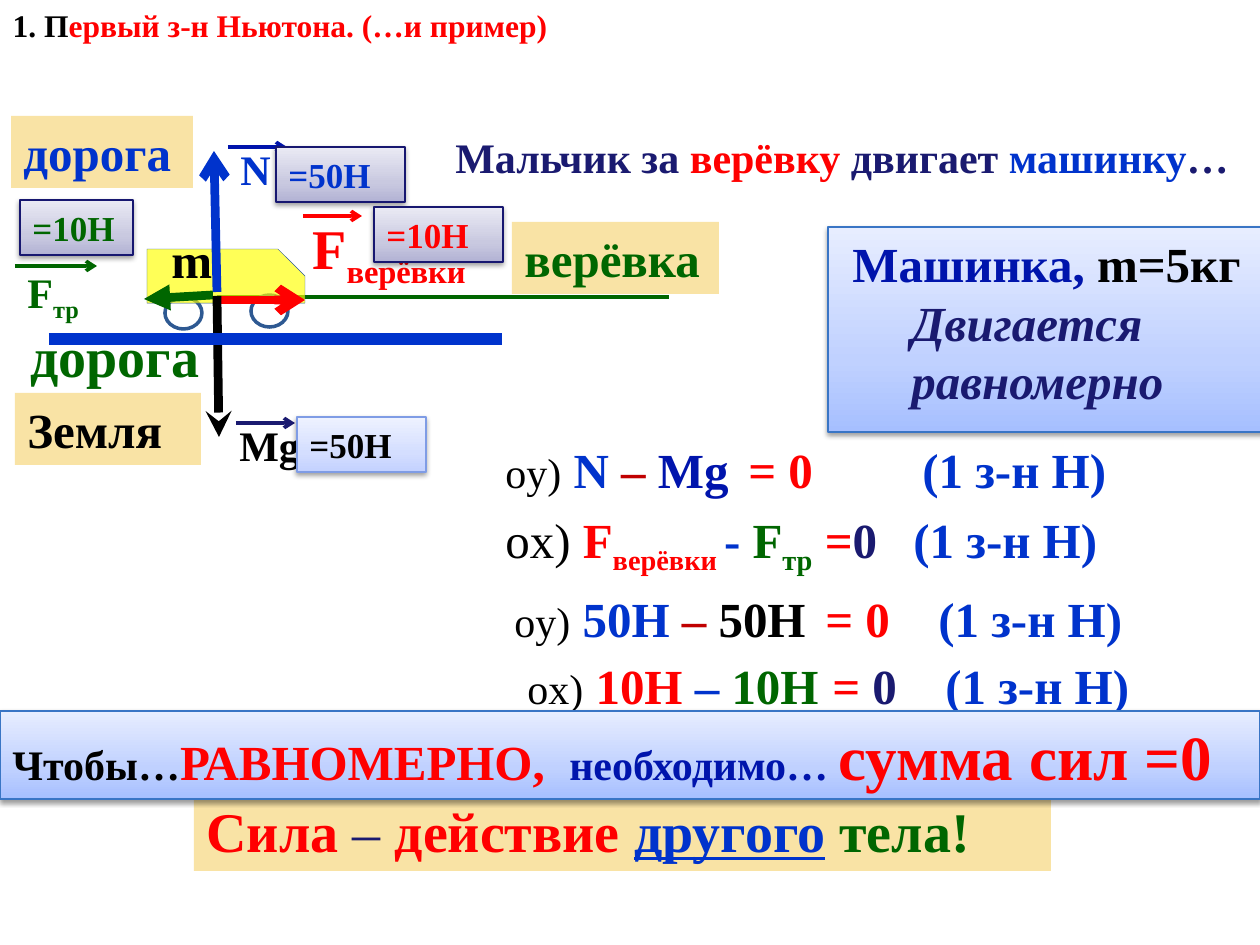
from lxml import etree
from pptx import Presentation
from pptx.dml.color import RGBColor
from pptx.enum.shapes import MSO_CONNECTOR, MSO_SHAPE
from pptx.enum.text import MSO_ANCHOR, PP_ALIGN
from pptx.oxml.ns import qn
from pptx.util import Pt

PX = 914400 / 126
FONT = "Times New Roman"
RECT, OVAL, SNIP = MSO_SHAPE.RECTANGLE, MSO_SHAPE.OVAL, MSO_SHAPE.SNIP_1_RECTANGLE
STRAIGHT, TOP, LEFT = MSO_CONNECTOR.STRAIGHT, MSO_ANCHOR.TOP, PP_ALIGN.LEFT
BLACK, RED, CRIMSON, GREEN = "000000", "FF0000", "C00000", "006600"
BLUE, NAVY, INDIGO, SAND = "0033CC", "1A1A70", "0014AC", "F9E3A5"
SKY = (("A6BFFF", "C0D1FF", "E7EDFF"), "3975C5")
PALE = (("C3D1FF", "D4DEFF", "EEF2FF"), "7F9CE5")
LILAC = (("B2B2D4", "C9C9E0", "EAEAF4"), "171770")


def px(*lengths):
    """Turn pixel lengths into EMU."""
    return [round(length * PX) for length in lengths]


def rgb(value):
    """Turn a hex string into a colour."""
    return RGBColor.from_string(value)


def child(parent, tag, **attributes):
    """Append a drawing element with its attributes."""
    return etree.SubElement(parent, qn(tag), {k: str(v) for k, v in attributes.items()})


def write(frame, runs, tabs=()):
    """Write (text, colour, size, style) runs; style letters are b, i, u and s for subscript."""
    frame.word_wrap = True
    frame.vertical_anchor = TOP
    paragraph = frame.paragraphs[0]
    paragraph.alignment = LEFT
    if tabs:
        stops = child(paragraph._p.get_or_add_pPr(), "a:tabLst")
        for stop in px(*tabs):
            child(stops, "a:tab", pos=stop, algn="l")
    for text, colour, size, style in runs:
        run = paragraph.add_run()
        run.text = text
        font = run.font
        font.name, font.size = FONT, Pt(size)
        font.bold, font.italic, font.underline = "b" in style, "i" in style, "u" in style
        font.color.rgb = rgb(colour)
        if "s" in style:
            font._element.set("baseline", "-25000")
    return paragraph


def label(slide, box, runs, tabs=()):
    """Place plain text in a box."""
    write(slide.shapes.add_textbox(*px(*box)).text_frame, runs, tabs)


def outline(slide, kind, box, colour, width):
    """Place an unfilled outlined shape."""
    shape = slide.shapes.add_shape(kind, *px(*box))
    shape.shadow.inherit = False
    shape.fill.background()
    shape.line.color.rgb = rgb(colour)
    shape.line.width = Pt(width)
    return shape


def plate(slide, box, runs):
    """Place text on a sand-coloured plate."""
    shape = slide.shapes.add_shape(RECT, *px(*box))
    shape.shadow.inherit = False
    shape.fill.solid()
    shape.fill.fore_color.rgb = rgb(SAND)
    shape.line.fill.background()
    write(shape.text_frame, runs)


def panel(slide, box, theme, runs, tabs=()):
    """Place text on a gradient panel with a soft shadow."""
    shades, edge = theme
    shape = outline(slide, RECT, box, edge, 0.75)
    shape.fill.gradient()
    shape.fill.gradient_angle = 90
    properties = shape.element.spPr
    stops = properties.find(qn("a:gradFill")).find(qn("a:gsLst"))
    for stop in list(stops):
        stops.remove(stop)
    for position, shade in zip((0, 35000, 100000), shades):
        child(child(stops, "a:gs", pos=position), "a:srgbClr", val=shade)
    shadow = child(properties.find(qn("a:effectLst")), "a:outerShdw",
                   blurRad=Pt(3.1), dist=Pt(1.6), dir=5400000, rotWithShape=0)
    child(child(shadow, "a:srgbClr", val=BLACK), "a:alpha", val=38000)
    return write(shape.text_frame, runs, tabs)


def line(slide, ends, colour, width, head=None):
    """Draw a straight line, with an arrowhead at its end if one is named."""
    connector = slide.shapes.add_connector(STRAIGHT, *px(*ends))
    connector.line.color.rgb = rgb(colour)
    connector.line.width = Pt(width)
    properties = connector.element.spPr
    if head:
        child(properties.find(qn("a:ln")), "a:tailEnd", type=head)
    child(properties, "a:effectLst")


def title(slide, box, runs):
    """Move and fill the title placeholder."""
    heading = slide.shapes.title
    heading.left, heading.top, heading.width, heading.height = px(*box)
    write(heading.text_frame, runs)


def car(slide, x, y):
    """Draw the toy car with its mass."""
    for left, top in ((18, 48), (104, 46)):
        outline(slide, OVAL, (x + left, y + top, 37, 32), "2E5992", 2)
    body = outline(slide, SNIP, (x, y, 158, 54), "2E5992", 0.25)
    body.adjustments[0] = 0.5
    body.fill.solid()
    body.fill.fore_color.rgb = rgb("FFFF00")
    tint = body.element.spPr.find(qn("a:solidFill")).find(qn("a:srgbClr"))
    child(tint, "a:alpha", val=66000)
    label(slide, (x + 12, y - 26, 79, 72), [("m", BLACK, 28, "b")])


def vector_name(slide, box, start, length, runs, colour):
    """Write a force symbol with the vector arrow above it."""
    x, y = box[0] + start[0], box[1] + start[1]
    label(slide, box, runs)
    line(slide, (x, y, x + length, y), colour, 2, "arrow")


def forces(slide, x, y):
    """Draw the car, its rope, the forces on it and their names."""
    line(slide, (x, y, x + 452, y), GREEN, 2.75)
    car(slide, x - 70, y - 48)
    for ends, colour, head in (
        ((0, 3, 88, 3), RED, "arrow"),
        ((0, -5, -3, -146), BLUE, "arrow"),
        ((-4, -2, -73, 2), GREEN, "triangle"),
        ((0, -1, 2, 140), BLACK, "stealth"),
    ):
        line(slide, [a + b for a, b in zip(ends, (x, y, x, y))], colour, 5, head)
    for box, start, length, runs, colour in (
        ((10, 116, 98, 64), (9, 10), 59, [("Mg", BLACK, 24, "b")], NAVY),
        ((11, -160, 98, 64), (0, 10), 59, [("N", BLUE, 24, "b")], INDIGO),
        ((-202, -37, 108, 64), (0, 6), 82,
         [("F", GREEN, 24, "b"), ("тр", GREEN, 24, "bs")], GREEN),
        ((83, -90, 213, 81), (3, 9), 59,
         [("F", RED, 32, "b"), ("верёвки", RED, 32, "bs")], RED),
    ):
        vector_name(slide, (x + box[0], y + box[1], *box[2:]), start, length, runs, colour)


def equation(slide, box, runs, tabs):
    """Write one projected equation, ending with the law it follows from."""
    label(slide, box, [*runs, ("\t(1 з-н Н)", BLUE, 28, "b")], tabs)


def equations(slide, x, y):
    """Stack the equations in symbols and in numbers."""
    equation(slide, (x, y, 767, 72), [
        ("oy)", BLACK, 24, ""), (" ", RED, 28, "b"), ("N ", BLUE, 28, "b"),
        ("– ", CRIMSON, 28, "b"), ("Mg", INDIGO, 28, "b"), ("\t= 0", RED, 28, "b")], (243, 417))
    equation(slide, (x, y + 70, 664, 72), [
        ("ox) ", BLACK, 28, ""), ("F", RED, 28, "b"), ("верёвки ", RED, 28, "bs"),
        ("- ", BLUE, 28, "b"), ("F", GREEN, 28, "b"), ("тр", GREEN, 28, "bs"),
        (" =", RED, 28, "b"), ("0", NAVY, 28, "b")], (408,))
    equation(slide, (x + 9, y + 149, 644, 72), [
        ("oy)", BLACK, 24, ""), (" ", RED, 28, "b"), ("50Н ", BLUE, 28, "b"),
        ("– ", CRIMSON, 28, "b"), ("50Н", BLACK, 28, "b"), ("\t= 0", RED, 28, "b")], (311, 424))
    equation(slide, (x + 22, y + 216, 631, 72), [
        ("ox)", BLACK, 24, ""), (" 10Н ", RED, 28, "b"), ("– ", BLUE, 28, "b"),
        ("10Н", GREEN, 28, "b"), ("\t= ", RED, 28, "b"), ("0", NAVY, 28, "b")], (305, 418))


def main():
    """Build the slide and save it."""
    deck = Presentation()
    deck.slide_width, deck.slide_height = px(1260, 945)
    slide = deck.slides.add_slide(deck.slide_layouts[5])
    title(slide, (0, 0, 1235, 50), [
        ("1. П", BLACK, 18, "b"), ("ервый з-н Ньютона. (…и пример)", RED, 18, "b")])
    forces(slide, 217, 297)
    plate(slide, (194, 790, 857, 81), [
        ("Сила", RED, 32, "b"), (" – ", NAVY, 32, ""), ("действие ", RED, 32, "b"),
        ("другого", BLUE, 32, "bu"), (" ", NAVY, 32, ""), ("тела!", GREEN, 32, "b")])
    label(slide, (443, 125, 817, 64), [
        ("Мальчик за ", NAVY, 24, "b"), ("верёвку", RED, 24, "b"),
        (" двигает ", NAVY, 24, "b"), ("машинку", BLUE, 24, "b"), ("…", NAVY, 24, "b")])
    for box, name, colour in (((15, 393, 186, 72), "Земля", BLACK),
                              ((11, 116, 182, 72), "дорога", BLUE),
                              ((512, 222, 207, 72), "верёвка", GREEN)):
        plate(slide, box, [(name, colour, 28, "b")])
    line(slide, (49, 339, 502, 339), BLUE, 6.5)
    label(slide, (18, 315, 207, 81), [("дорога", GREEN, 32, "b")])
    motion = panel(slide, (828, 227, 437, 205), SKY, [
        ("Машинка, ", INDIGO, 28, "b"), ("m=5кг", BLACK, 28, "b"),
        (" Двигается равномерно", NAVY, 28, "bi")])
    motion.space_before = Pt(3)
    margin, indent = px(71, -59)
    motion._p.pPr.set("marL", str(margin))
    motion._p.pPr.set("indent", str(indent))
    equations(slide, 493, 433)
    for box, theme, value, colour in (((297, 417, 129, 55), PALE, "=50Н", BLACK),
                                      ((276, 147, 129, 55), LILAC, "=50Н", BLUE),
                                      ((374, 207, 129, 55), LILAC, "=10Н", RED),
                                      ((20, 200, 113, 55), LILAC, "=10Н", GREEN)):
        panel(slide, box, theme, [(value, colour, 20, "b")])
    conclusion = panel(slide, (0, 711, 1260, 88), SKY, [
        ("Чтобы…", BLACK, 24, "b"), ("РАВНОМЕРНО,", RED, 28, "b"),
        ("\tнеобходимо… ", INDIGO, 24, "b"), ("сумма сил =0", RED, 36, "b")], (557,))
    conclusion.space_before = Pt(3)
    deck.save("out.pptx")


if __name__ == "__main__":
    main()
